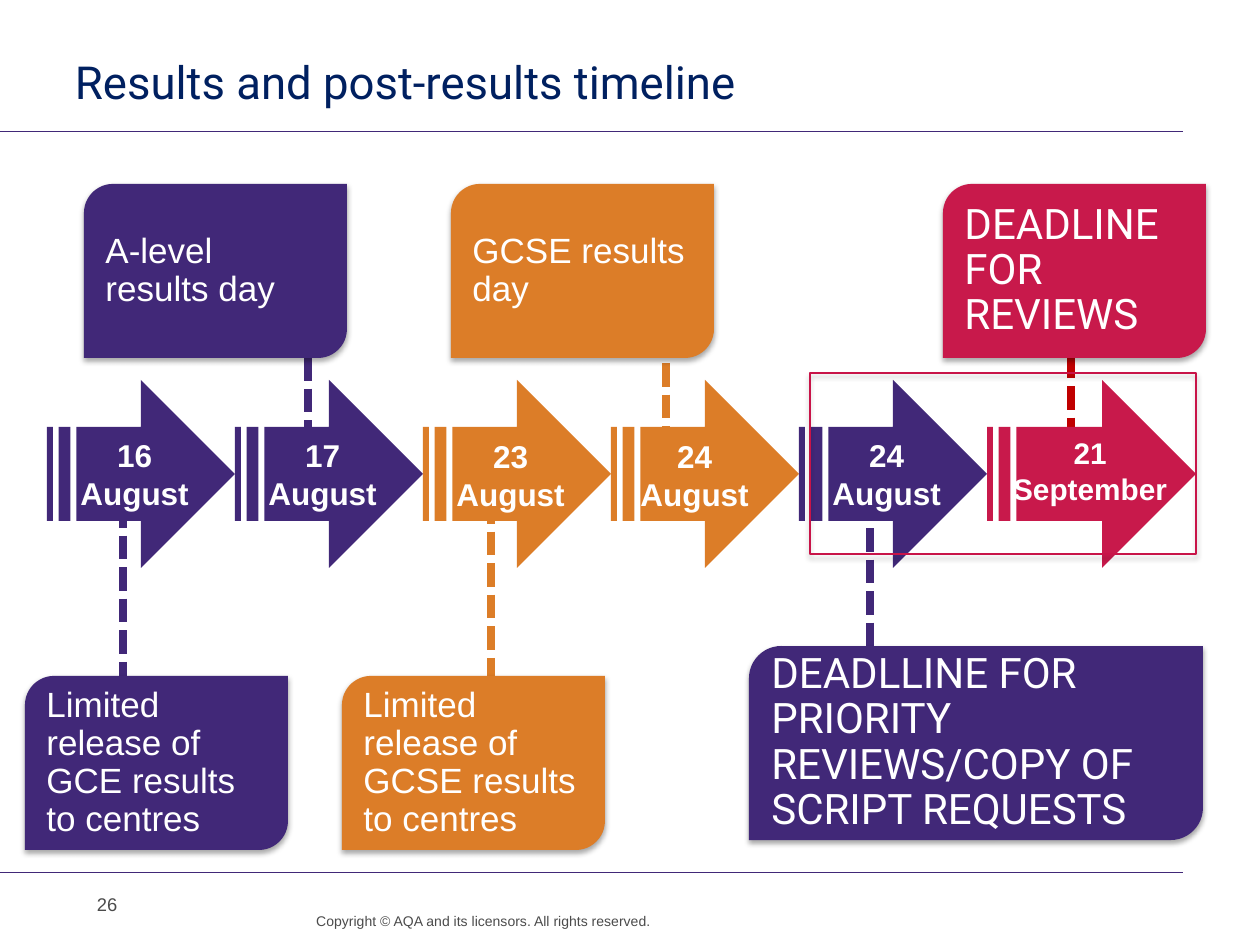
from dataclasses import dataclass

from lxml.etree import SubElement
from pptx import Presentation
from pptx.dml.color import RGBColor
from pptx.enum.dml import MSO_LINE
from pptx.enum.shapes import MSO_CONNECTOR, MSO_SHAPE
from pptx.enum.text import MSO_ANCHOR, PP_ALIGN
from pptx.oxml.ns import qn
from pptx.util import Emu, Pt


@dataclass(frozen=True)
class Theme:
    purple: str = "412878"
    orange: str = "DC7D28"
    crimson: str = "C8194B"
    frame: str = "C81448"
    deadline: str = "C00000"
    navy: str = "002060"
    grey: str = "4B4B4B"
    white: str = "FFFFFF"
    body: str = "Arial"
    display: str = "Roboto"
    title_size: float = 26
    deadline_size: float = 24
    callout_size: float = 20
    date_size: float = 18
    long_date_size: float = 17
    number_size: float = 10.5
    footer_size: float = 8


T = Theme()
EMU_PER_PX = 914400 / 126


def px(n):
    return Emu(round(n * EMU_PER_PX))


def rgb(color):
    return RGBColor.from_string(color)


def write(sp, text, *, size, color=T.white, font=T.body, bold=False,
          align=PP_ALIGN.LEFT, anchor=MSO_ANCHOR.TOP, spacing=None,
          insets=(13, 6, 13, 6), wrap=True):
    """Fill a shape with text, one paragraph per line; insets run left, top, right, bottom."""
    tf = sp.text_frame
    tf.word_wrap = wrap
    tf.vertical_anchor = anchor
    tf.margin_left, tf.margin_top, tf.margin_right, tf.margin_bottom = map(px, insets)
    tf.text = text
    for p in tf.paragraphs:
        p.alignment = align
        p.line_spacing = spacing
        f = p.runs[0].font
        f.name, f.size, f.bold = font, Pt(size), bold
        f.color.rgb = rgb(color)


def add_text(slide, box, text, **fmt):
    write(slide.shapes.add_textbox(*map(px, box)), text, **fmt)


def add_line(slide, start, end, color, width, dash=None):
    line = slide.shapes.add_connector(MSO_CONNECTOR.STRAIGHT, *map(px, start + end))
    line.line.color.rgb = rgb(color)
    line.line.width = Pt(width)
    if dash:
        line.line.dash_style = dash
    SubElement(line._element.spPr, qn("a:effectLst"))


def add_block(slide, kind, box, fill=None, outline=None):
    sp = slide.shapes.add_shape(kind, *map(px, box))
    sp.shadow.inherit = False
    if fill:
        sp.fill.solid()
        sp.fill.fore_color.rgb = rgb(fill)
    else:
        sp.fill.background()
    if outline:
        sp.line.color.rgb = rgb(outline)
        sp.line.width = Pt(0.75)
    else:
        sp.line.fill.background()
    return sp


def drop_shadow(sp):
    effects = sp._element.spPr.find(qn("a:effectLst"))
    shadow = SubElement(effects, qn("a:outerShdw"), blurRad=str(Pt(3.1)),
                        dist=str(Pt(1.8)), dir="5400000", rotWithShape="0")
    black = SubElement(shadow, qn("a:srgbClr"), val="000000")
    SubElement(black, qn("a:alpha"), val="35000")


def add_callout(slide, box, text, fill, **fmt):
    sp = add_block(slide, MSO_SHAPE.ROUND_2_DIAG_RECTANGLE, box, fill)
    drop_shadow(sp)
    write(sp, text, anchor=MSO_ANCHOR.MIDDLE, spacing=0.9, **fmt)


def add_date_arrows(slide):
    left, top, side = 47, 380, 188
    middle = dict(anchor=MSO_ANCHOR.MIDDLE, insets=(10, 5, 5, 5))
    dates = [
        ("16\nAugust", T.purple, side, T.date_size, middle),
        ("17\nAugust", T.purple, side, T.date_size, middle),
        ("23\nAugust", T.orange, side, T.date_size, dict(insets=(20, 10, 15, 0))),
        ("24\nAugust", T.orange, side, T.date_size, dict(insets=(10, 10, 13, 0))),
        ("24\nAugust", T.purple, side, T.date_size, middle),
        ("21\nSeptember", T.crimson, 209, T.long_date_size, dict(insets=(20, 8, 5, 5))),
    ]
    for i, (text, fill, width, size, layout) in enumerate(dates):
        sp = add_block(slide, MSO_SHAPE.STRIPED_RIGHT_ARROW,
                       (left + i * side, top, width, side), fill)
        write(sp, text, size=size, bold=True, align=PP_ALIGN.CENTER, wrap=False, **layout)


def add_callouts(slide):
    width, height, upper, lower = 263, 174, 184, 676
    plain = dict(size=T.callout_size)
    strong = dict(size=T.deadline_size, font=T.display)
    for box, text, fill, fmt in [
        ((84, upper, width, height), "A-level results day", T.purple, plain),
        ((451, upper, width, height), "GCSE results day", T.orange, plain),
        ((943, upper, width, height), "DEADLINE FOR REVIEWS", T.crimson, strong),
        ((749, 646, 454, 194),
         "DEADLLINE FOR PRIORITY REVIEWS/COPY OF SCRIPT REQUESTS", T.purple, strong),
        ((25, lower, width, height),
         "Limited release of GCE results to centres", T.purple, plain),
        ((342, lower, width, height),
         "Limited release of GCSE results to centres", T.orange, plain),
    ]:
        add_callout(slide, box, text, fill, **fmt)


def main():
    prs = Presentation()
    prs.slide_width, prs.slide_height = px(1260), px(945)
    slide = prs.slides.add_slide(prs.slide_layouts[6])

    for y in (132, 873):
        add_line(slide, (0, y), (1183, y), T.purple, 0.6)
    for x, top, bottom, color in [
        (1071, 260, 494, T.deadline),
        (123, 441, 791, T.purple),
        (870, 465, 767, T.purple),
        (666, 300, 475, T.orange),
        (491, 437, 786, T.orange),
        (308, 294, 469, T.purple),
    ]:
        add_line(slide, (x, top), (x, bottom), color, 4.5, MSO_LINE.SQUARE_DOT)

    add_text(slide, (75, 60, 1109, 59), "Results and post-results timeline",
             size=T.title_size, color=T.navy, font=T.display, spacing=Pt(28),
             insets=(0, 0, 13, 0))
    add_text(slide, (282, 912, 369, 33),
             "Copyright © AQA and its licensors. All rights reserved.",
             size=T.footer_size, color=T.grey, align=PP_ALIGN.RIGHT,
             spacing=Pt(10), insets=(0, 0, 0, 0))
    add_date_arrows(slide)
    add_text(slide, (84, 887, 96, 50), "26", size=T.number_size, color=T.grey)
    drop_shadow(add_block(slide, MSO_SHAPE.RECTANGLE, (810, 373, 386, 181),
                          outline=T.frame))
    add_callouts(slide)
    prs.save("out.pptx")


if __name__ == "__main__":
    main()
